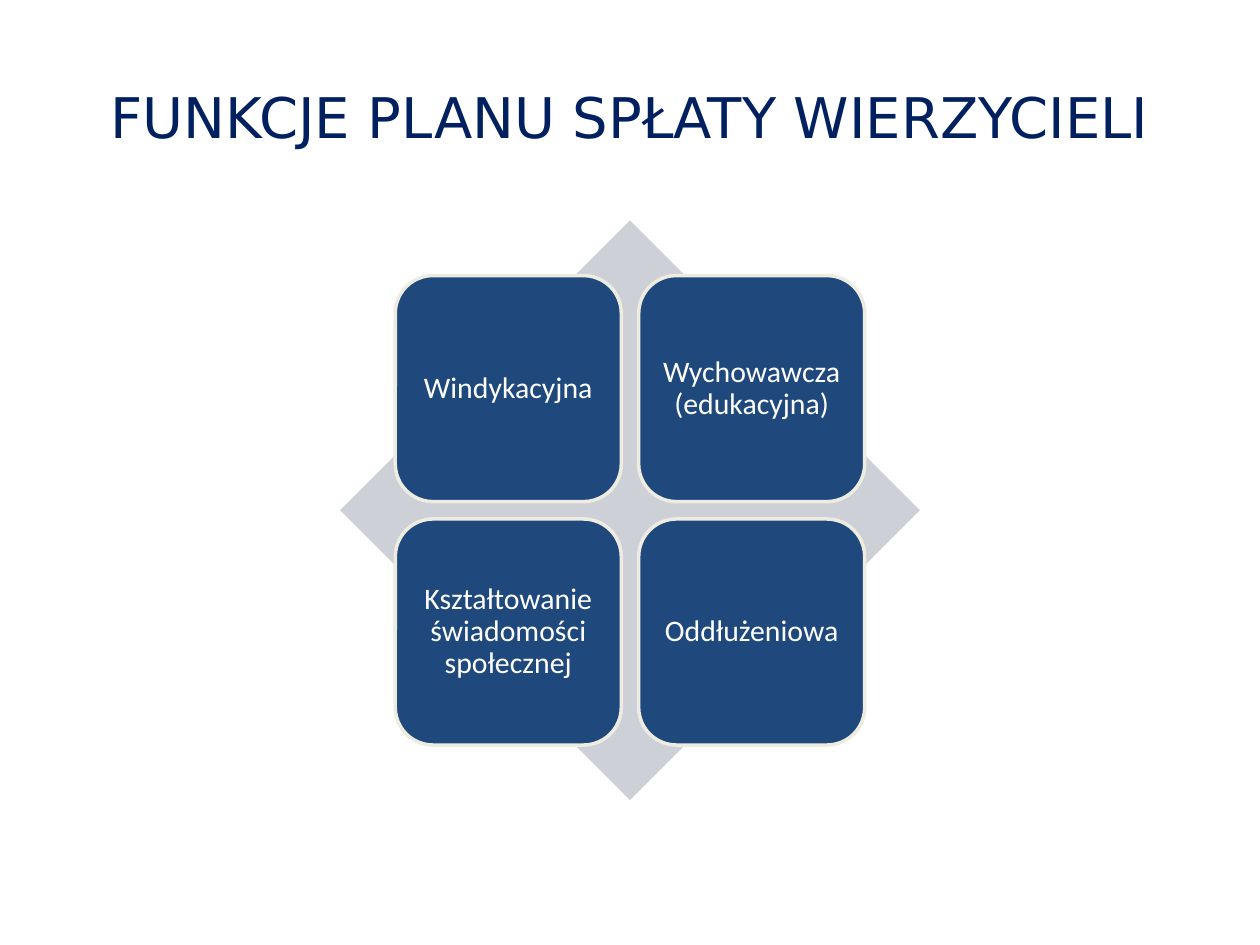
from pptx import Presentation
from pptx.dml.color import RGBColor as RGB
from pptx.enum.shapes import MSO_SHAPE as Shape
from pptx.enum.text import MSO_ANCHOR as Anchor, PP_ALIGN as Align
from pptx.util import Inches as In, Pt

NAVY, BLUE, GREY, CREAM, WHITE = "002060", "1F497D", "CDD0D7", "EEECE1", "FFFFFF"
ROLES = [
    ["Windykacyjna", "Wychowawcza (edukacyjna)"],
    ["Kształtowanie świadomości społecznej", "Oddłużeniowa"],
]


def color(code):
    return RGB.from_string(code)


def write(shape, text, size, font, ink, inset=None, lead=None):
    frame = shape.text_frame
    frame.word_wrap = True
    frame.vertical_anchor = Anchor.MIDDLE
    if inset is not None:
        frame.margin_left = frame.margin_right = In(inset)
        frame.margin_top = frame.margin_bottom = In(inset)
    par = frame.paragraphs[0]
    par.alignment = Align.CENTER
    par.line_spacing = lead
    run = par.add_run()
    run.text = text
    run.font.size = Pt(size)
    run.font.name = font
    run.font.color.rgb = color(ink)


def draw(parent, kind, box, fill, line=None):
    shape = parent.add_shape(kind, *map(In, box))
    shape.shadow.inherit = False
    shape.fill.solid()
    shape.fill.fore_color.rgb = color(fill)
    if line:
        shape.line.color.rgb = color(line)
        shape.line.width = Pt(2)
    else:
        shape.line.fill.background()
    return shape


def head(slide, box, text):
    title = slide.shapes.title
    title.left, title.top, title.width, title.height = map(In, box)
    write(title, text, 32, "DejaVu Sans", NAVY)


def matrix(slide, box, rows):
    left, top, side, _ = box
    group = slide.shapes.add_group_shape().shapes
    draw(group, Shape.DIAMOND, box, GREY)

    # Tiles as shares of the diamond's side
    edge, tile, step = 0.095 * side, 0.39 * side, 0.42 * side
    for r, row in enumerate(rows):
        for c, text in enumerate(row):
            spot = (left + edge + c * step, top + edge + r * step, tile, tile)
            card = draw(group, Shape.ROUNDED_RECTANGLE, spot, BLUE, CREAM)
            write(card, text, 17, "Calibri", WHITE, inset=0.07, lead=0.9)


def main():
    deck = Presentation()
    deck.slide_width, deck.slide_height = In(10), In(7.5)
    slide = deck.slides.add_slide(deck.slide_layouts[5])
    head(slide, (0.5, 0.3, 9, 1.25), "FUNKCJE PLANU SPŁATY WIERZYCIELI")
    matrix(slide, (2.7, 1.75, 4.6, 4.6), ROLES)
    deck.save("out.pptx")


if __name__ == "__main__":
    main()
